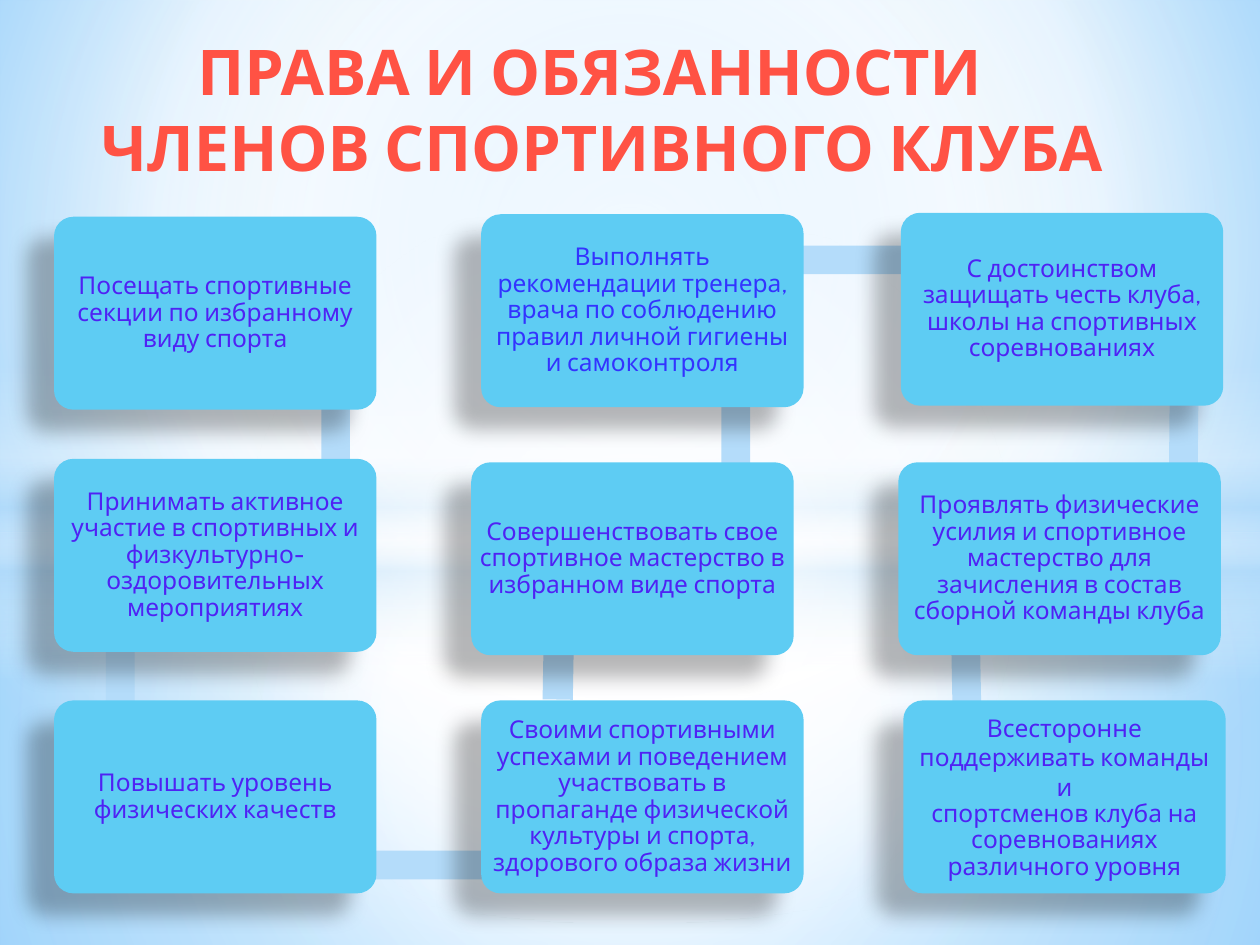
from dataclasses import dataclass

from lxml import etree
from pptx import Presentation
from pptx import util as u
from pptx.dml.color import RGBColor
from pptx.enum import shapes, text
from pptx.oxml.ns import qn


@dataclass(frozen=True)
class Theme:
    font: str = "Cabin"
    title_size: int = 36
    card_size: int = 14
    title: str = "FF5244"
    card_text: str = "4F22F4"
    accent_text: str = "3333FF"
    card: str = "5ECCF3"
    link: str = "B4DCFA"
    white: str = "FFFFFF"
    shadow: str = "000000"
    sky: str = "9ED5FF"
    deep_sky: str = "5BB9FF"


THEME = Theme()
CENTER = (50, 50, 50, 50)
CARD_SIZE = (6.5, 3.89)

TITLE = ["ПРАВА И ОБЯЗАННОСТИ", "ЧЛЕНОВ СПОРТИВНОГО КЛУБА"]

# box in cm, gradient stops (position, colour, opacity), centre or None for vertical
GLOWS = [
    (shapes.MSO_SHAPE.RECTANGLE, (0, 10.74, 25.4, 8.31),
     [(0, THEME.white, 91), (37, THEME.white, 76), (100, THEME.link, 79)], CENTER),
    (shapes.MSO_SHAPE.RECTANGLE, (0, 0, 25.4, 10.74),
     [(0, THEME.white, 89), (48, THEME.white, 62), (100, THEME.link, 79)], CENTER),
    (shapes.MSO_SHAPE.RECTANGLE, (0, 7.37, 25.4, 6.35),
     [(0, THEME.white, 0), (29, THEME.white, 30), (45, THEME.link, 40),
      (55, THEME.white, 26), (65, THEME.link, 60), (100, THEME.white, 0)], None),
    (shapes.MSO_SHAPE.OVAL, (0, 4.45, 25.4, 14.17),
     [(0, THEME.white, 100), (54, THEME.white, 0)], CENTER),
]

# box in cm, rotation
LINKS = [
    ((4.34, 8.58, 4.85, 0.58), 90),
    ((0, 12.34, 4.85, 0.58), 90),
    ((3.33, 17.15, 8.59, 0.58), 0),
    ((12.78, 4.95, 9.78, 0.58), 0),
    ((12.34, 8.71, 4.98, 0.58), 90.1),
    ((10.62, 13.16, 1.27, 0.61), 271),
    ((21.36, 8.58, 5, 0.58), 90.5),
    ((17.07, 12.4, 4.78, 0.58), 88.9),
]

# left and top in cm, text colour, paragraphs as (line spacing, wording)
CARDS = [
    (1.09, 4.37, THEME.card_text,
     [(0.9, "Посещать спортивные секции по избранному виду спорта")]),
    (1.09, 9.25, THEME.card_text,
     [(0.9, "Принимать активное участие в спортивных и "
            "физкультурно-оздоровительных мероприятиях")]),
    (1.09, 14.12, THEME.card_text, [(0.9, "Повышать уровень физических качеств")]),
    (9.7, 14.12, THEME.card_text,
     [(0.9, "Своими спортивными успехами и поведением участвовать в пропаганде "
            "физической культуры и спорта, здорового образа жизни")]),
    (9.7, 4.32, THEME.accent_text,
     [(0.9, "Выполнять рекомендации тренера, врача по соблюдению правил "
            "личной гигиены и самоконтроля")]),
    (9.5, 9.32, THEME.card_text,
     [(0.9, "Совершенствовать свое спортивное мастерство в избранном виде спорта")]),
    (18.16, 4.29, THEME.card_text,
     [(0.9, "С достоинством защищать честь клуба, школы на спортивных соревнованиях")]),
    (18.11, 9.32, THEME.card_text,
     [(0.9, "Проявлять физические усилия и спортивное мастерство для зачисления "
            "в состав сборной команды клуба")]),
    (18.21, 14.12, THEME.card_text,
     [(1.0, "Всесторонне поддерживать команды и"),
      (0.9, "спортсменов клуба на соревнованиях различного уровня")]),
]


def apply_format(target, values):
    for name, value in values.items():
        setattr(target, name, value)


def add_node(parent, tag, **attributes):
    node = etree.SubElement(parent, qn(tag))
    for name, value in attributes.items():
        node.set(name, str(value))
    return node


def add_color(parent, color, opacity=100):
    node = add_node(parent, "a:srgbClr", val=color)
    if opacity < 100:
        add_node(node, "a:alpha", val=opacity * 1000)


def set_gradient(owner, fill, stops, center):
    """Fill with a circular gradient around center, or a vertical one without it."""
    fill.gradient()
    gradient = owner.xpath(".//a:gradFill")[0]
    for child in list(gradient):
        gradient.remove(child)
    stop_list = add_node(gradient, "a:gsLst")
    for position, color, opacity in stops:
        add_color(add_node(stop_list, "a:gs", pos=position * 1000), color, opacity)
    if center:
        circle = add_node(gradient, "a:path", path="circle")
        edges = {edge: part * 1000 for edge, part in zip("ltrb", center)}
        add_node(circle, "a:fillToRect", **edges)
    else:
        add_node(gradient, "a:lin", ang=90 * 60000, scaled=0)


def add_plain_shape(parent, kind, box, color=None):
    shape = parent.shapes.add_shape(kind, *map(u.Cm, box))
    shape.shadow.inherit = False
    shape.line.fill.background()
    if color:
        shape.fill.solid()
        shape.fill.fore_color.rgb = RGBColor.from_string(color)
    return shape


def add_span(para, wording, size, color, bold=False):
    span = para.add_run()
    span.text = wording
    apply_format(span.font, {"name": THEME.font, "size": u.Pt(size), "bold": bold})
    span.font.color.rgb = RGBColor.from_string(color)
    return span


def outline_span(span, color):
    line = etree.Element(qn("a:ln"), w=str(u.Pt(0.75)))
    add_color(add_node(line, "a:solidFill"), color)
    span.font._element.insert(0, line)


def add_background(slide):
    stops = [(0, THEME.sky, 100), (60, THEME.white, 100), (100, THEME.deep_sky, 100)]
    set_gradient(slide.element, slide.background.fill, stops, (20, 10, 20, 60))
    for kind, box, stops, center in GLOWS:
        glow = add_plain_shape(slide, kind, box)
        set_gradient(glow.element, glow.fill, stops, center)


def add_title(slide):
    box = slide.shapes.add_textbox(*map(u.Cm, (0.51, 0.53, 24.61, 3.2)))
    frame = box.text_frame
    frame.word_wrap = True
    margins = [{"marR": u.Cm(1.85)}, {"marL": u.Cm(0.5)}]
    for index, (wording, margin) in enumerate(zip(TITLE, margins)):
        para = frame.add_paragraph() if index else frame.paragraphs[0]
        para.alignment = text.PP_ALIGN.CENTER
        for name, value in margin.items():
            para._p.get_or_add_pPr().set(name, str(value))
        add_span(para, wording, THEME.title_size, THEME.title, bold=True)


def add_card(group, left, top, color, paragraphs):
    card = add_plain_shape(group, shapes.MSO_SHAPE.ROUNDED_RECTANGLE,
                           (left, top, *CARD_SIZE), THEME.card)
    card.adjustments[0] = 0.1
    effects = card.element.xpath("./p:spPr/a:effectLst")[0]
    shadow = add_node(effects, "a:outerShdw", blurRad=u.Pt(11.8), dist=u.Pt(19.7),
                      dir=141 * 60000, algn="ctr", rotWithShape=0)
    add_color(shadow, THEME.shadow, 28)
    frame = card.text_frame
    inset = u.Cm(0.04)
    apply_format(frame, {
        "word_wrap": True, "vertical_anchor": text.MSO_ANCHOR.MIDDLE,
        "margin_left": inset, "margin_right": inset,
        "margin_top": inset, "margin_bottom": inset,
    })
    for index, (spacing, wording) in enumerate(paragraphs):
        para = frame.add_paragraph() if index else frame.paragraphs[0]
        apply_format(para, {"alignment": text.PP_ALIGN.CENTER, "line_spacing": spacing})
        span = add_span(para, wording, THEME.card_size, color)
        outline_span(span, THEME.card_text)


def main():
    deck = Presentation()
    apply_format(deck, {"slide_width": u.Cm(25.4), "slide_height": u.Cm(19.05)})
    slide = deck.slides.add_slide(deck.slide_layouts[6])
    add_background(slide)
    add_title(slide)
    group = slide.shapes.add_group_shape()
    for box, rotation in LINKS:
        link = add_plain_shape(group, shapes.MSO_SHAPE.RECTANGLE, box, THEME.link)
        link.rotation = rotation
    for card in CARDS:
        add_card(group, *card)
    deck.save("out.pptx")


if __name__ == "__main__":
    main()
